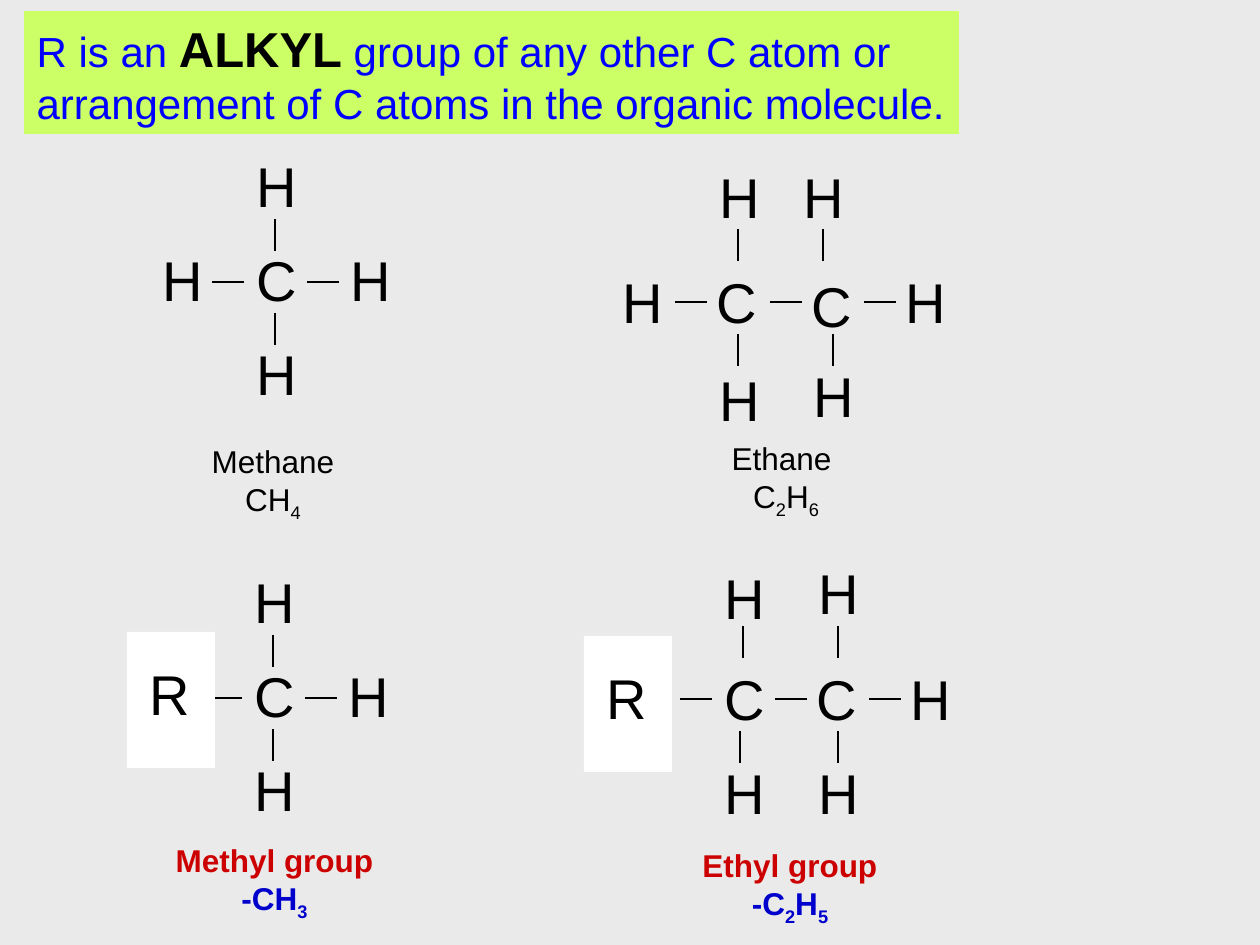
from pptx import Presentation
from pptx.dml.color import RGBColor
from pptx.enum.shapes import MSO_CONNECTOR, MSO_SHAPE
from pptx.enum.text import MSO_ANCHOR, MSO_AUTO_SIZE, PP_ALIGN
from pptx.oxml.ns import qn
from pptx.util import Pt
from lxml.etree import SubElement

SCALE = 914400 / 126
BOND = 32
STEP = 94
FACE = "Arial"
HUES = {
    "back": "EAEAEA", "lime": "CCFF66", "blue": "0000FF", "ink": "000000",
    "white": "FFFFFF", "red": "CC0000", "navy": "0000CC",
}


def px(*nums):
    """Turn px lengths into EMU."""
    return [round(num * SCALE) for num in nums]


def hue(name):
    """Look up a colour."""
    return RGBColor.from_string(HUES[name])


def style(font, size, color="ink", bold=False):
    """Set face, size, colour and weight of a font."""
    font.name, font.size, font.bold = FACE, Pt(size), bold
    font.color.rgb = hue(color)


def place(shape, x, y, wide, high):
    """Move and size a shape."""
    shape.left, shape.top, shape.width, shape.height = px(x, y, wide, high)


def add_title(slide):
    """Fill the title banner."""
    title = slide.shapes.title
    place(title, 24, 11, 935, 123)
    title.fill.solid()
    title.fill.fore_color.rgb = hue("lime")
    frame = title.text_frame
    frame.word_wrap = True
    frame.auto_size = MSO_AUTO_SIZE.NONE
    frame.vertical_anchor = MSO_ANCHOR.BOTTOM
    para = frame.paragraphs[0]
    para.alignment = PP_ALIGN.LEFT
    rest = " group of any other C atom or arrangement of C atoms in the organic molecule."
    for text, size, color, bold in (
        ("R is an ", 24, "blue", False),
        ("ALKYL", 28, "ink", True),
        (rest, 24, "blue", False),
    ):
        run = para.add_run()
        run.text = text
        style(run.font, size, color, bold)


def add_atom(slide, text, x, y):
    """Write one atom symbol."""
    frame = slide.shapes.add_textbox(*px(x, y, 66, 80)).text_frame
    frame.word_wrap = False
    para = frame.paragraphs[0]
    para.text = text
    style(para.font, 32)


def add_bond(slide, x, y, wide=0, high=0):
    """Draw one bond line."""
    line = slide.shapes.add_connector(
        MSO_CONNECTOR.STRAIGHT, *px(x, y, x + wide, y + high))
    line.line.color.rgb = hue("ink")
    line.line.width = Pt(0.75)
    SubElement(line._element.spPr, qn("a:effectLst"))


def add_bonds(slide, flat, tall):
    """Draw the level and upright bonds from their start points."""
    for x, y in flat:
        add_bond(slide, x, y, wide=BOND)
    for x, y in tall:
        add_bond(slide, x, y, high=BOND)


def add_cross(slide, x, y, left):
    """Draw one carbon with its bonds and hydrogens."""
    add_bonds(slide, [(x - BOND, y + 43), (x + 63, y + 43)],
              [(x + 31, y - 20), (x + 31, y + 74)])
    add_atom(slide, "C", x, y)
    spots = [(STEP, 0), (0, -STEP), (0, STEP)]
    if left:
        spots.append((-STEP, 0))
    for across, down in spots:
        add_atom(slide, "H", x + across, y + down)


def add_pair(slide, carbons, hydros, flat, tall):
    """Draw two linked carbons with their bonds and hydrogens."""
    add_bonds(slide, flat, tall)
    for text, spots in (("C", carbons), ("H", hydros)):
        for x, y in spots:
            add_atom(slide, text, x, y)


def add_rest(slide, x, y):
    """Draw the white block that holds R."""
    block = slide.shapes.add_shape(MSO_SHAPE.RECTANGLE, *px(x, y, 88, 136))
    block.shadow.inherit = False
    block.fill.solid()
    block.fill.fore_color.rgb = hue("white")
    block.line.fill.background()
    add_atom(slide, "R", x + 10, y + 21)


def add_label(slide, spot, name, code, colors=("ink", "ink"), bold=False):
    """Write a name above its formula, with lowered digits."""
    frame = slide.shapes.add_textbox(*px(*spot)).text_frame
    frame.word_wrap = False
    top, low = frame.paragraphs[0], frame.add_paragraph()
    top.text = name
    for char in code:
        run = low.add_run()
        run.text = char
        if char.isdigit():
            run._r.get_or_add_rPr().set("baseline", "-25000")
    for para, color in zip((top, low), colors):
        para.alignment = PP_ALIGN.CENTER
        style(para.font, 18, color, bold)


def main():
    """Build the slide and save it."""
    deck = Presentation()
    deck.slide_width, deck.slide_height = px(1260, 945)
    slide = deck.slides.add_slide(deck.slide_layouts[5])
    slide.background.fill.solid()
    slide.background.fill.fore_color.rgb = hue("back")
    add_title(slide)

    add_cross(slide, 244, 239, left=True)
    add_label(slide, (195, 436, 156, 88), "Methane ", "CH4")

    add_pair(slide, [(704, 261), (799, 265)],
             [(610, 261), (893, 261), (707, 156), (791, 156), (707, 359), (801, 355)],
             [(x, 302) for x in (675, 770, 864)],
             [(738, 229), (823, 229), (738, 334), (833, 334)])
    add_label(slide, (719, 433, 134, 88), "Ethane ", "C2H6")

    vivid = ("red", "navy")
    add_cross(slide, 242, 655, left=False)
    add_rest(slide, 127, 632)
    add_label(slide, (163, 835, 223, 88), "Methyl group", "-CH3", vivid, True)

    add_pair(slide, [(712, 658), (804, 658)],
             [(898, 658), (712, 557), (806, 552), (712, 752), (806, 752)],
             [(x, 699) for x in (680, 775, 869)],
             [(743, 626), (838, 626), (740, 731), (838, 731)])
    add_rest(slide, 584, 636)
    add_label(slide, (690, 840, 200, 88), "Ethyl group", "-C2H5", vivid, True)
    deck.save("out.pptx")


if __name__ == "__main__":
    main()
